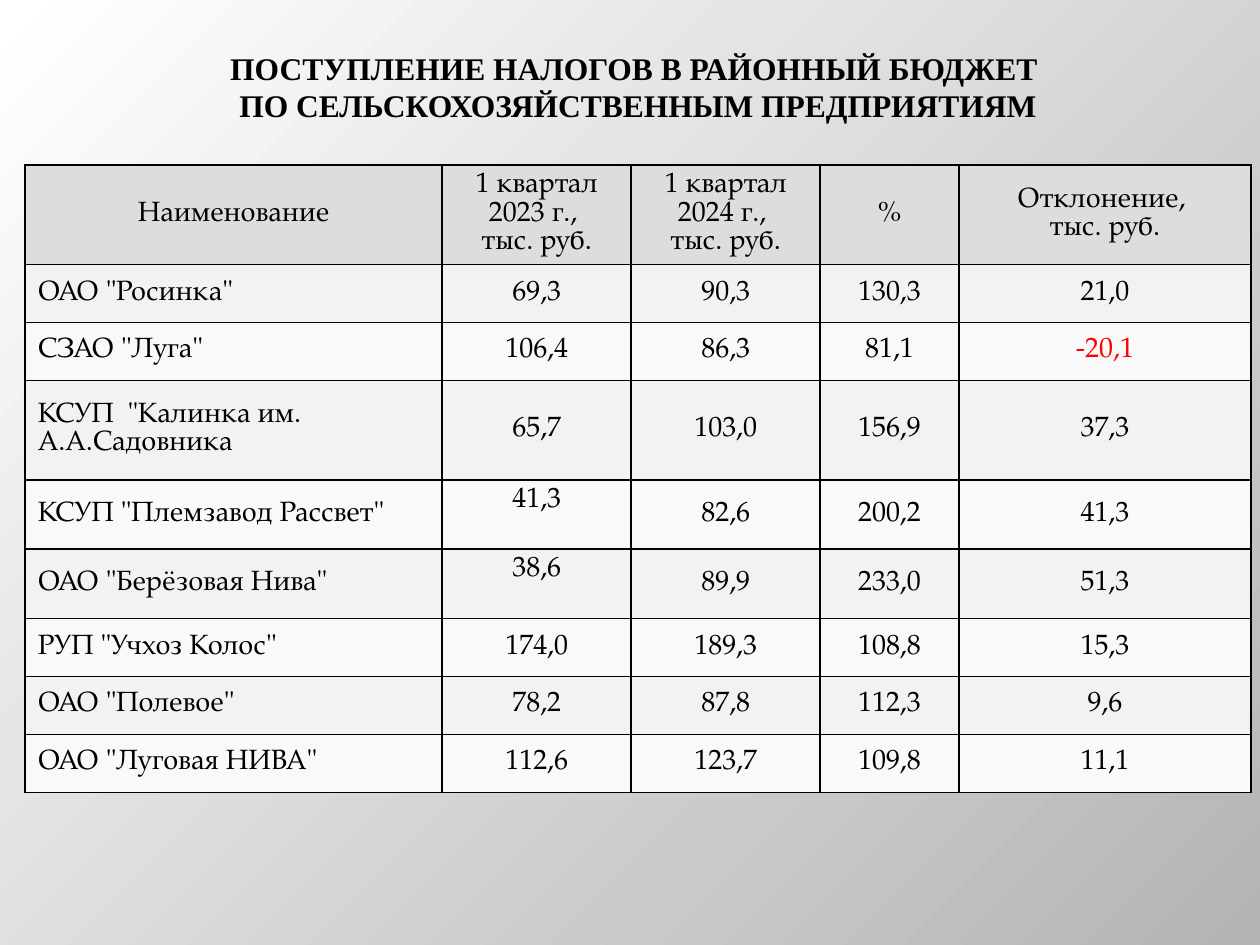
from dataclasses import dataclass

from lxml.etree import SubElement
from pptx import Presentation
from pptx.dml.color import RGBColor as Color
from pptx.enum.text import MSO_ANCHOR as Anchor, PP_ALIGN as Align
from pptx.oxml.ns import qn
from pptx.util import Inches, Pt


@dataclass(frozen=True)
class Theme:
    ink: str = "000000"
    negative: str = "FF0000"
    header: str = "DDDDDD"
    bands: tuple = ("F9F9F9", "F2F2F2")
    backdrop: tuple = ("FFFFFF", "B4B4B4")
    title_font: str = "Times New Roman"
    table_font: str = "TeX Gyre Pagella"
    title_size: float = 18
    table_size: float = 16
    table_line: float = 16.3
    border: float = 1


theme = Theme()


def write(frame, lines, align, color, font, size, bold=False, spacing=None):
    """Fill a text frame with one formatted paragraph per line."""
    for index, line in enumerate(lines):
        para = frame.paragraphs[0] if index == 0 else frame.add_paragraph()
        para.text = line
        para.alignment = align
        para.line_spacing = spacing
        formats = {"name": font, "size": Pt(size), "bold": bold}
        for span in para.runs:
            for key, value in formats.items():
                setattr(span.font, key, value)
            span.font.color.rgb = Color.from_string(color)


def add_borders(cell):
    """Draw a thin line on all four sides of a table cell."""
    properties = cell._tc.get_or_add_tcPr()
    for side in ("lnL", "lnR", "lnT", "lnB"):
        line = SubElement(properties, qn(f"a:{side}"), w=str(Pt(theme.border)))
        fill = SubElement(line, qn("a:solidFill"))
        SubElement(fill, qn("a:srgbClr"), val=theme.ink)


deck = Presentation()
deck.slide_width, deck.slide_height = Inches(10), Inches(7.5)
page = deck.slides.add_slide(deck.slide_layouts[6])

# Background: gradient spreading from the top left corner
backdrop = page.background.fill
backdrop.gradient()
for stop, color, position in zip(backdrop.gradient_stops, theme.backdrop, (0, 1)):
    stop.color.rgb = Color.from_string(color)
    stop.position = position
gradient = page.element.find(f".//{qn('a:gradFill')}")
gradient.remove(gradient.find(qn("a:lin")))
circle = SubElement(gradient, qn("a:path"), path="circle")
SubElement(circle, qn("a:fillToRect"), r="100000", b="100000")

# Title
box = page.shapes.add_textbox(Inches(0.28), Inches(0.29), Inches(9.57), Inches(0.79))
box.text_frame.word_wrap = True
box.text_frame.vertical_anchor = Anchor.MIDDLE
title = "ПОСТУПЛЕНИЕ НАЛОГОВ В РАЙОННЫЙ БЮДЖЕТ \vПО СЕЛЬСКОХОЗЯЙСТВЕННЫМ ПРЕДПРИЯТИЯМ"
write(box.text_frame, [title], Align.CENTER, theme.ink,
      theme.title_font, theme.title_size, bold=True)

# Table content
rows = [
    ("Наименование", "1 квартал 2023 г., \nтыс. руб.", "1 квартал 2024 г., \nтыс. руб.",
     "%", "Отклонение, \nтыс. руб."),
    ('ОАО "Росинка"', "69,3", "90,3", "130,3", "21,0"),
    ('СЗАО "Луга"', "106,4", "86,3", "81,1", "-20,1"),
    ('КСУП  "Калинка им. А.А.Садовника', "65,7", "103,0", "156,9", "37,3"),
    ('КСУП "Племзавод Рассвет"', "41,3", "82,6", "200,2", "41,3"),
    ('ОАО "Берёзовая Нива"', "38,6", "89,9", "233,0", "51,3"),
    ('РУП "Учхоз Колос"', "174,0", "189,3", "108,8", "15,3"),
    ('ОАО "Полевое"', "78,2", "87,8", "112,3", "9,6"),
    ('ОАО "Луговая НИВА"', "112,6", "123,7", "109,8", "11,1"),
]
widths = [3.31, 1.5, 1.5, 1.1, 2.32]
heights = [0.79, 0.46, 0.46, 0.79, 0.55, 0.55, 0.46, 0.46, 0.46]
raised_cells = {(4, 1), (5, 1)}

# Table grid
table = page.shapes.add_table(
    len(rows), len(widths), Inches(0.2), Inches(1.31),
    Inches(sum(widths)), Inches(sum(heights))).table
table.first_row = table.horz_banding = False
for column, width in zip(table.columns, widths):
    column.width = Inches(width)
for row, height in zip(table.rows, heights):
    row.height = Inches(height)

# Table cells
for r, values in enumerate(rows):
    for c, value in enumerate(values):
        cell = table.cell(r, c)
        add_borders(cell)
        cell.fill.solid()
        cell.fill.fore_color.rgb = Color.from_string(
            theme.bands[r % 2] if r else theme.header)
        cell.vertical_anchor = Anchor.MIDDLE
        if (r, c) in raised_cells:
            cell.margin_bottom = Inches(0.27)
        write(cell.text_frame, value.split("\n"),
              Align.LEFT if r and c == 0 else Align.CENTER,
              theme.negative if value.startswith("-") else theme.ink,
              theme.table_font, theme.table_size, spacing=Pt(theme.table_line))

deck.save("out.pptx")
